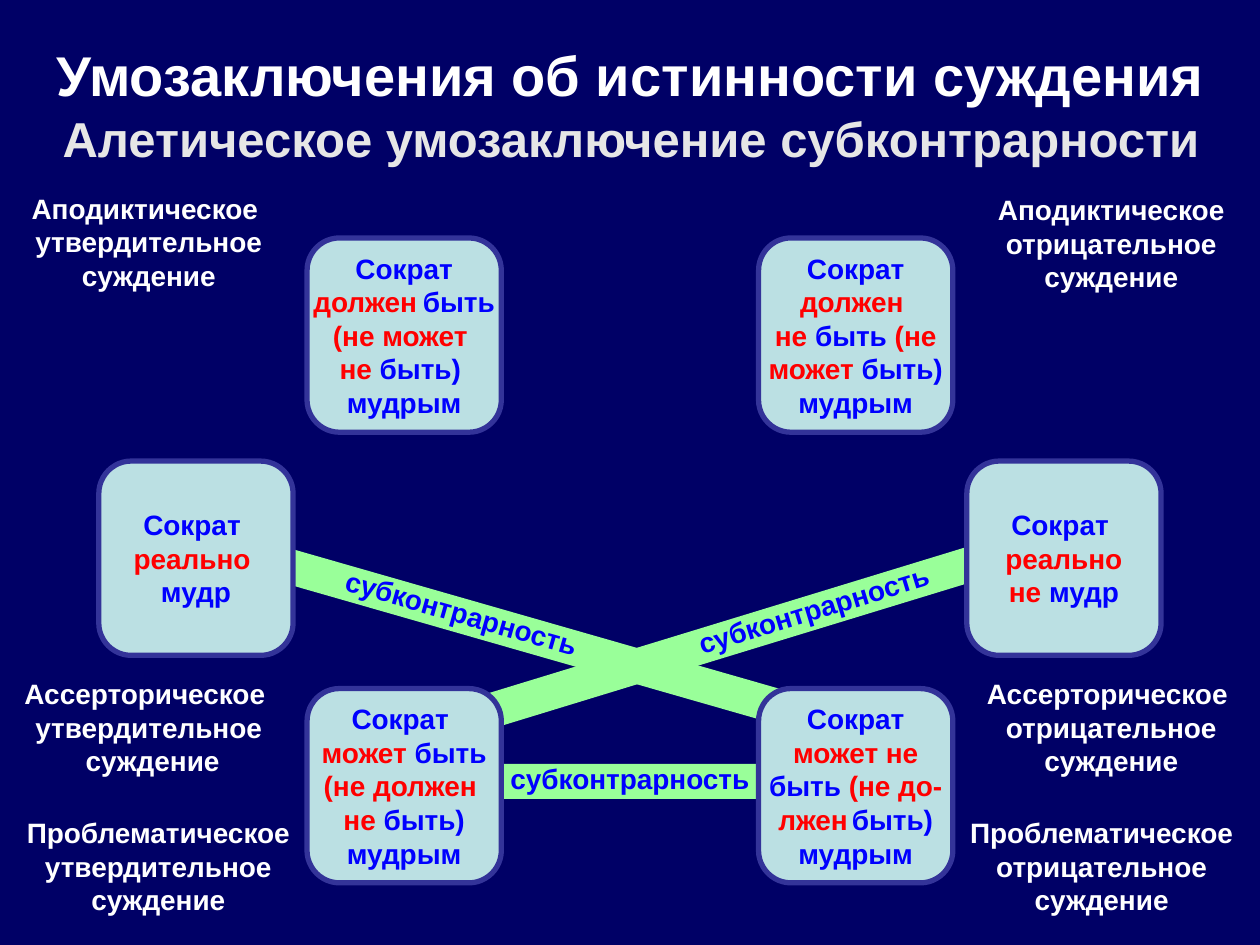
import pptx
import pptx.dml.color
import pptx.enum.shapes
import pptx.enum.text
import pptx.util

Pt = pptx.util.Pt
SHAPES = pptx.enum.shapes.MSO_SHAPE
COLORS = {
    "background": "000066",
    "white": "FFFFFF",
    "subtitle": "E6E6E6",
    "band": "99FF99",
    "card": "BBE0E3",
    "border": "333399",
    "blue": "0000FF",
    "red": "FF0000",
}


def color(name):
    return pptx.dml.color.RGBColor.from_string(COLORS[name])


def write(paragraph, text, *, ink="white", size=16, bold=True, font="Arial"):
    """Append text to the paragraph; each newline becomes a line break."""
    for number, line in enumerate(text.split("\n")):
        if number:
            paragraph.add_line_break()
        if line:
            run = paragraph.add_run()
            run.text = line
            run.font.name = font
            run.font.size = Pt(size)
            run.font.bold = bold
            run.font.color.rgb = color(ink)


class SquareSlide:
    CARD_SIDE = 111
    LABEL_WIDTH, LABEL_HEIGHT = 170, 66
    BAND_HEIGHT = 20

    def __init__(self, slide):
        self.slide = slide
        slide.background.fill.solid()
        slide.background.fill.fore_color.rgb = color("background")

    def centered_paragraph(self, shape, wrap=True, insets=(7.2, 3.6, 7.2, 3.6)):
        frame = shape.text_frame
        frame.word_wrap = wrap
        frame.vertical_anchor = pptx.enum.text.MSO_ANCHOR.MIDDLE
        (frame.margin_left, frame.margin_top,
         frame.margin_right, frame.margin_bottom) = map(Pt, insets)
        paragraph = frame.paragraphs[0]
        paragraph.alignment = pptx.enum.text.PP_ALIGN.CENTER
        return paragraph

    def text_box(self, left, top, width, height):
        box = self.slide.shapes.add_textbox(Pt(left), Pt(top), Pt(width), Pt(height))
        return self.centered_paragraph(box)

    def filled_shape(self, preset, left, top, width, height, fill):
        shape = self.slide.shapes.add_shape(
            preset, Pt(left), Pt(top), Pt(width), Pt(height))
        shape.shadow.inherit = False
        shape.fill.solid()
        shape.fill.fore_color.rgb = color(fill)
        shape.line.fill.background()
        return shape

    def title(self, heading, subheading):
        paragraph = self.text_box(8, 14.4, 705, 90)
        write(paragraph, heading + "\n", size=32)
        write(paragraph, subheading, size=28, ink="subtitle")

    def label(self, left, top, text):
        write(self.text_box(left, top, self.LABEL_WIDTH, self.LABEL_HEIGHT), text)

    def band(self, left, top, width, rotation=0, left_inset=7.2, right_inset=7.2):
        band = self.filled_shape(
            SHAPES.RECTANGLE, left, top, width, self.BAND_HEIGHT, "band")
        band.rotation = rotation
        paragraph = self.centered_paragraph(
            band, insets=(left_inset, 0, right_inset, 3.6))
        write(paragraph, "субконтрарность", ink="blue")

    def card(self, left, top, runs):
        """Each run is a text, its ink and, if it differs, its size."""
        card = self.filled_shape(
            SHAPES.ROUNDED_RECTANGLE, left, top, self.CARD_SIDE, self.CARD_SIDE, "card")
        card.adjustments[0] = 0.167
        card.line.fill.solid()
        card.line.fill.fore_color.rgb = color("border")
        card.line.width = Pt(3)
        paragraph = self.centered_paragraph(card, wrap=False)
        for text, ink, *size in runs:
            write(paragraph, text, ink=ink, size=size[0] if size else 16)


def main():
    deck = pptx.Presentation()
    deck.slide_width, deck.slide_height = Pt(720), Pt(540)
    square = SquareSlide(deck.slides.add_slide(deck.slide_layouts[6]))

    square.title("Умозаключения об истинности суждения",
                 "Алетическое умозаключение субконтрарности")

    square.band(281, 436.5, 158)
    square.band(260.5, 345.5, 371.5, rotation=343, left_inset=47)
    square.band(90.5, 345.5, 371.5, rotation=16, right_inset=34)

    outer_left, inner_left, inner_right, outer_right = 56.5, 175.5, 433.5, 552.5
    upper, middle, lower = 136, 263.5, 393.5
    cards = [
        (inner_left, upper, [
            ("Сократ\n", "blue"), ("должен", "red"), (" ", "red", 12),
            ("быть\n", "blue"), ("(не может \nне", "red"),
            (" быть) \nмудрым", "blue")]),
        (inner_right, upper, [
            ("Сократ\n", "blue"), ("должен \nне", "red"), (" быть ", "blue"),
            ("(не\nможет ", "red"), ("быть)\nмудрым", "blue")]),
        (outer_left, middle, [
            ("Сократ \n", "blue"), ("реально \n", "red"), ("мудр", "blue")]),
        (outer_right, middle, [
            ("Сократ \n", "blue"), (" реально \nне ", "red"), ("мудр", "blue")]),
        (inner_left, lower, [
            ("Сократ \n", "blue"), ("может", "red"), (" быть\n", "blue"),
            ("(не должен \nне", "red"), (" быть)\nмудрым", "blue")]),
        (inner_right, lower, [
            ("Сократ\n", "blue"), ("может не\n", "red"), ("быть ", "blue"),
            ("(не до-\nлжен", "red"), (" ", "red", 8), ("быть)\nмудрым", "blue")]),
    ]
    for left, top, runs in cards:
        square.card(left, top, runs)

    labels = [
        (0, 105, "Аподиктическое \nутвердительное\nсуждение"),
        (550, 106, "Аподиктическое\nотрицательное\nсуждение"),
        (0, 382.5, "Ассерторическое \nутвердительное\n суждение"),
        (550, 382.5, "Ассерторическое \nотрицательное\nсуждение"),
        (5.5, 462, "Проблематическое\nутвердительное\nсуждение"),
        (544.5, 462, "Проблематическое\nотрицательное\nсуждение"),
    ]
    for left, top, text in labels:
        square.label(left, top, text)

    deck.save("out.pptx")


if __name__ == "__main__":
    main()
